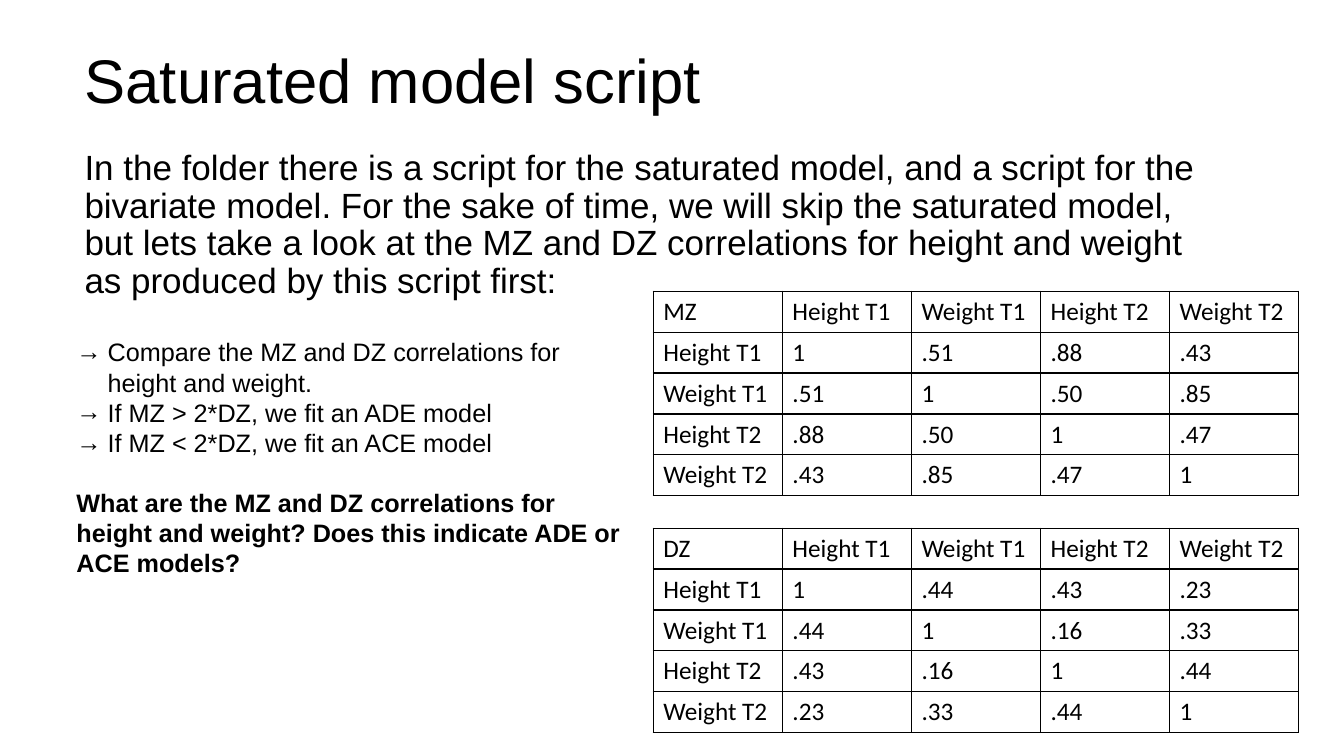
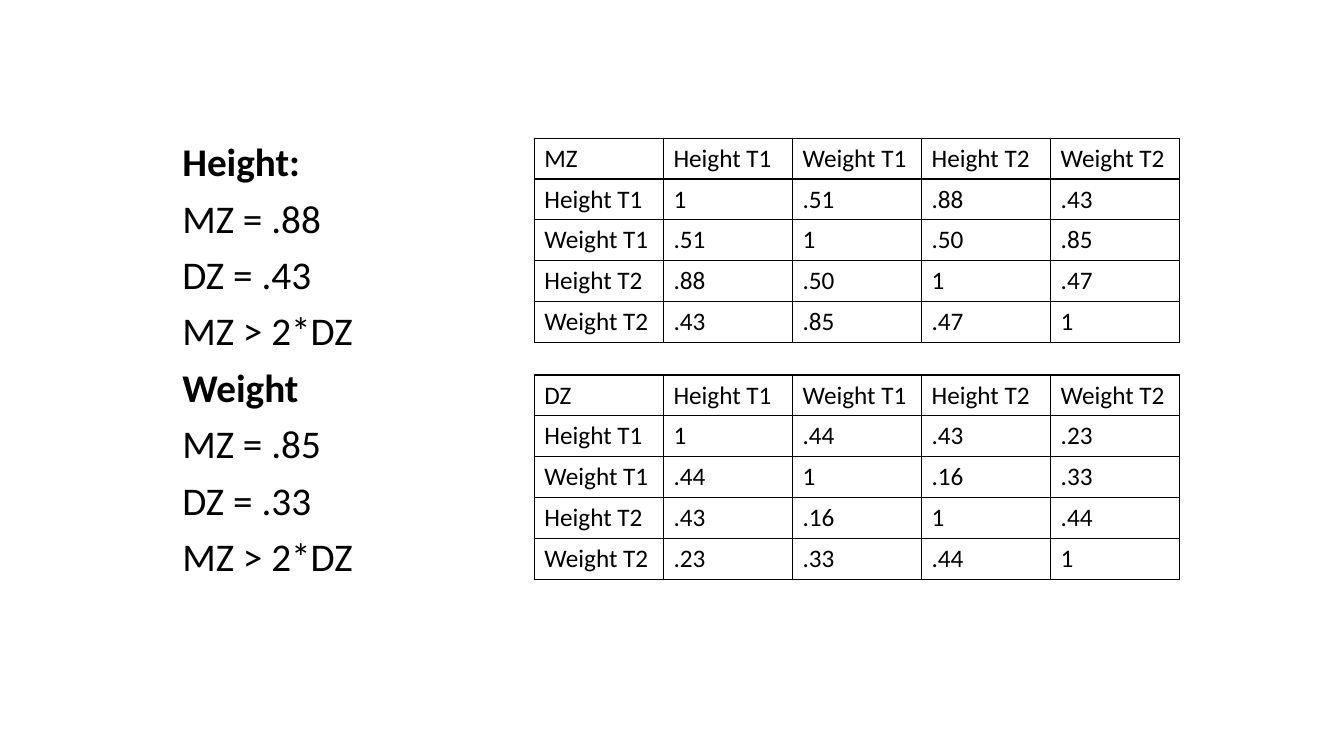
import dataclasses

import pptx
import pptx.dml.color
import pptx.enum.text
import pptx.oxml
import pptx.oxml.ns
import pptx.util

Inches = pptx.util.Inches
Pt = pptx.util.Pt

BLACK = "000000"
TITLE_ONLY, BLANK = 5, 6
VARIABLES = ("Height T1", "Weight T1", "Height T2", "Weight T2")
COLUMN_WIDTH, ROW_HEIGHT, TABLE_STEP = 1.28, 0.4, 2.35
BULLET_INDENT = 0.31

TITLE_FONT = {"name": "Arial", "size": Pt(44), "bold": False}
INTRO_FONT = {"name": "Arial", "size": Pt(25), "bold": False}
NOTE_FONT = {"name": "Arial", "size": Pt(18), "bold": False}
QUESTION_FONT = NOTE_FONT | {"bold": True}
RESULT_FONT = {"name": "Calibri", "size": Pt(28), "bold": False}
HEADING_FONT = RESULT_FONT | {"bold": True}
CELL_FONT = {"name": "Calibri", "size": Pt(18), "bold": False}

BODY_SPACING = {"line_spacing": 0.9, "space_before": Pt(10)}


@dataclasses.dataclass(frozen=True)
class Line:
    text: str
    font: dict
    spacing: dict = dataclasses.field(default_factory=dict)
    bullet: str = ""


@dataclasses.dataclass(frozen=True)
class Correlations:
    twins: str
    rows: tuple[str, ...]

    def grid(self) -> list[list[str]]:
        body = [[name, *row.split()] for name, row in zip(VARIABLES, self.rows)]
        return [[self.twins, *VARIABLES], *body]


TWIN_TABLES = (
    Correlations("MZ", ("1 .51 .88 .43", ".51 1 .50 .85", ".88 .50 1 .47", ".43 .85 .47 1")),
    Correlations("DZ", ("1 .44 .43 .23", ".44 1 .16 .33", ".43 .16 1 .44", ".23 .33 .44 1")),
)

INTRO = Line(
    "In the folder there is a script for the saturated model, and a script for the "
    "bivariate model. For the sake of time, we will skip the saturated model, but lets "
    "take a look at the MZ and DZ correlations for height and weight as produced by "
    "this script first:",
    INTRO_FONT,
    BODY_SPACING,
)
NOTES = (
    "Compare the MZ and DZ correlations for height and weight.",
    "If MZ > 2*DZ, we fit an ADE model",
    "If MZ < 2*DZ, we fit an ACE model",
)
QUESTION = Line(
    "What are the MZ and DZ correlations for height and weight? "
    "Does this indicate ADE or ACE models?",
    QUESTION_FONT,
    {"space_before": Pt(21)},
)
RESULTS = {
    "Height:": ("MZ = .88", "DZ = .43", "MZ > 2*DZ"),
    "Weight": ("MZ = .85", "DZ = .33", "MZ > 2*DZ"),
}


def color(value: str) -> pptx.dml.color.RGBColor:
    return pptx.dml.color.RGBColor.from_string(value)


def set_values(target, values: dict) -> None:
    for name, value in values.items():
        setattr(target, name, value)


def add_bullet(para, character: str) -> None:
    """Give the paragraph a hanging indent and a bullet character."""
    properties = para._p.get_or_add_pPr()
    indent = Inches(BULLET_INDENT)
    properties.set("marL", str(indent))
    properties.set("indent", str(-indent))
    namespace = pptx.oxml.ns.nsdecls("a")
    for xml in (f'<a:buFont {namespace} typeface="Arial"/>',
                f'<a:buChar {namespace} char="{character}"/>'):
        properties.append(pptx.oxml.parse_xml(xml))


def write_line(para, line: Line) -> None:
    para.alignment = pptx.enum.text.PP_ALIGN.LEFT
    set_values(para, line.spacing)
    span = para.add_run()
    span.text = line.text
    set_values(span.font, line.font)
    span.font.color.rgb = color(BLACK)
    if line.bullet:
        add_bullet(para, line.bullet)


def write_lines(frame, lines: list[Line]) -> None:
    set_values(frame, {"word_wrap": True, "auto_size": pptx.enum.text.MSO_AUTO_SIZE.NONE})
    for index, line in enumerate(lines):
        write_line(frame.add_paragraph() if index else frame.paragraphs[0], line)


def add_text(page, left: float, top: float, width: float, height: float,
             lines: list[Line]) -> None:
    box = page.shapes.add_textbox(Inches(left), Inches(top), Inches(width), Inches(height))
    write_lines(box.text_frame, lines)


def set_title(page, text: str) -> None:
    title = page.shapes.title
    set_values(title, {"left": Inches(0.74), "top": Inches(0.1),
                       "width": Inches(11.5), "height": Inches(1.45)})
    title.text_frame.vertical_anchor = pptx.enum.text.MSO_ANCHOR.MIDDLE
    write_lines(title.text_frame, [Line(text, TITLE_FONT, {"line_spacing": 0.9})])


def add_borders(cell) -> None:
    """Draw a thin line on each side; borders must precede the fill in the XML."""
    properties = cell._tc.get_or_add_tcPr()
    for index, side in enumerate("LRTB"):
        border = pptx.oxml.parse_xml(
            f'<a:ln{side} {pptx.oxml.ns.nsdecls("a")} w="{Pt(1)}">'
            f'<a:solidFill><a:srgbClr val="{BLACK}"/></a:solidFill></a:ln{side}>')
        properties.insert(index, border)


def add_correlations(page, left: float, top: float, correlations: Correlations) -> None:
    grid = correlations.grid()
    size = len(grid)
    table = page.shapes.add_table(size, size, Inches(left), Inches(top),
                                  Inches(size * COLUMN_WIDTH), Inches(size * ROW_HEIGHT)).table
    set_values(table, {"first_row": False, "horz_banding": False})
    for row, texts in enumerate(grid):
        for column, text in enumerate(texts):
            cell = table.cell(row, column)
            cell.fill.background()
            add_borders(cell)
            write_line(cell.text_frame.paragraphs[0], Line(text, CELL_FONT))


def add_twin_tables(page, left: float, top: float) -> None:
    for index, correlations in enumerate(TWIN_TABLES):
        add_correlations(page, left, top + index * TABLE_STEP, correlations)


def build_script_page(deck) -> None:
    page = deck.slides.add_slide(deck.slide_layouts[TITLE_ONLY])
    set_title(page, "Saturated model script")
    add_text(page, 0.74, 1.44, 11.5, 4.76, [INTRO])
    add_twin_tables(page, 6.48, 2.89)
    notes = [Line(text, NOTE_FONT, bullet="→") for text in NOTES]
    add_text(page, 0.66, 3.29, 5.68, 2.83, [*notes, QUESTION])


def build_results_page(deck) -> None:
    page = deck.slides.add_slide(deck.slide_layouts[BLANK])
    lines = []
    for heading, results in RESULTS.items():
        lines.append(Line(heading, HEADING_FONT, BODY_SPACING))
        lines.extend(Line(text, RESULT_FONT, BODY_SPACING) for text in results)
    add_text(page, 1.71, 1.37, 5.22, 4.76, lines)
    add_twin_tables(page, 5.3, 1.37)


def main() -> None:
    deck = pptx.Presentation()
    set_values(deck, {"slide_width": Inches(13.33), "slide_height": Inches(7.5)})
    build_script_page(deck)
    build_results_page(deck)
    deck.save("out.pptx")


if __name__ == "__main__":
    main()
